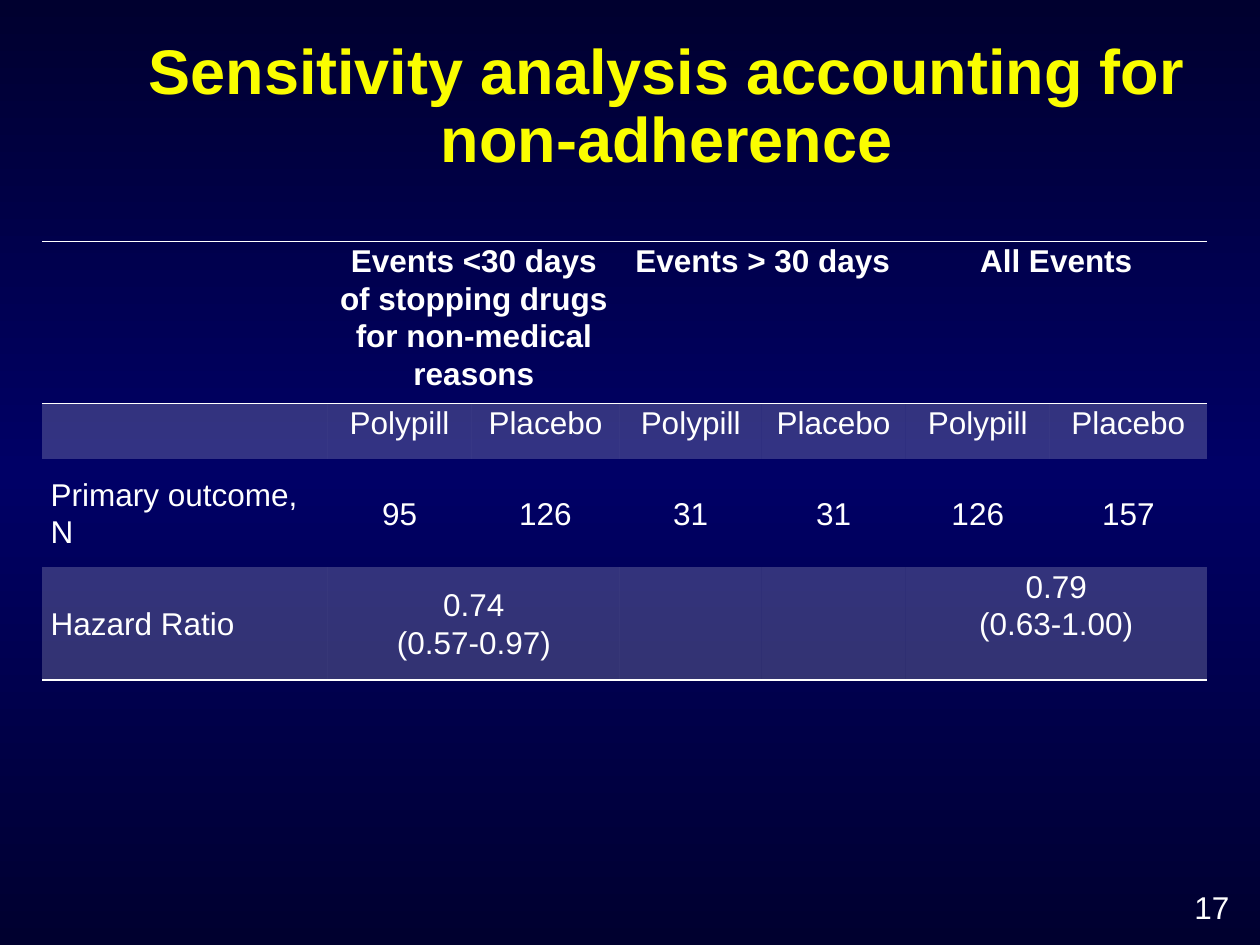
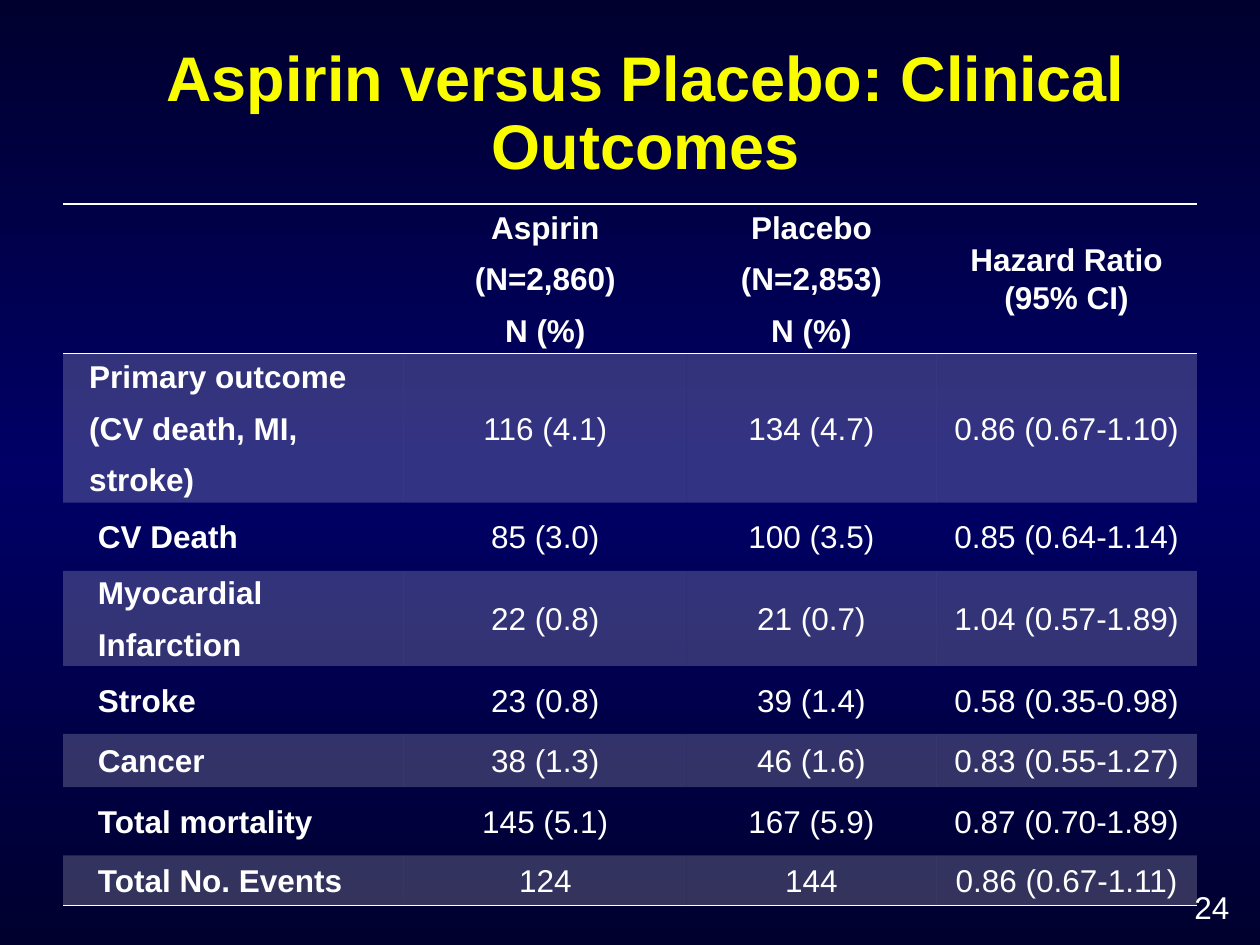
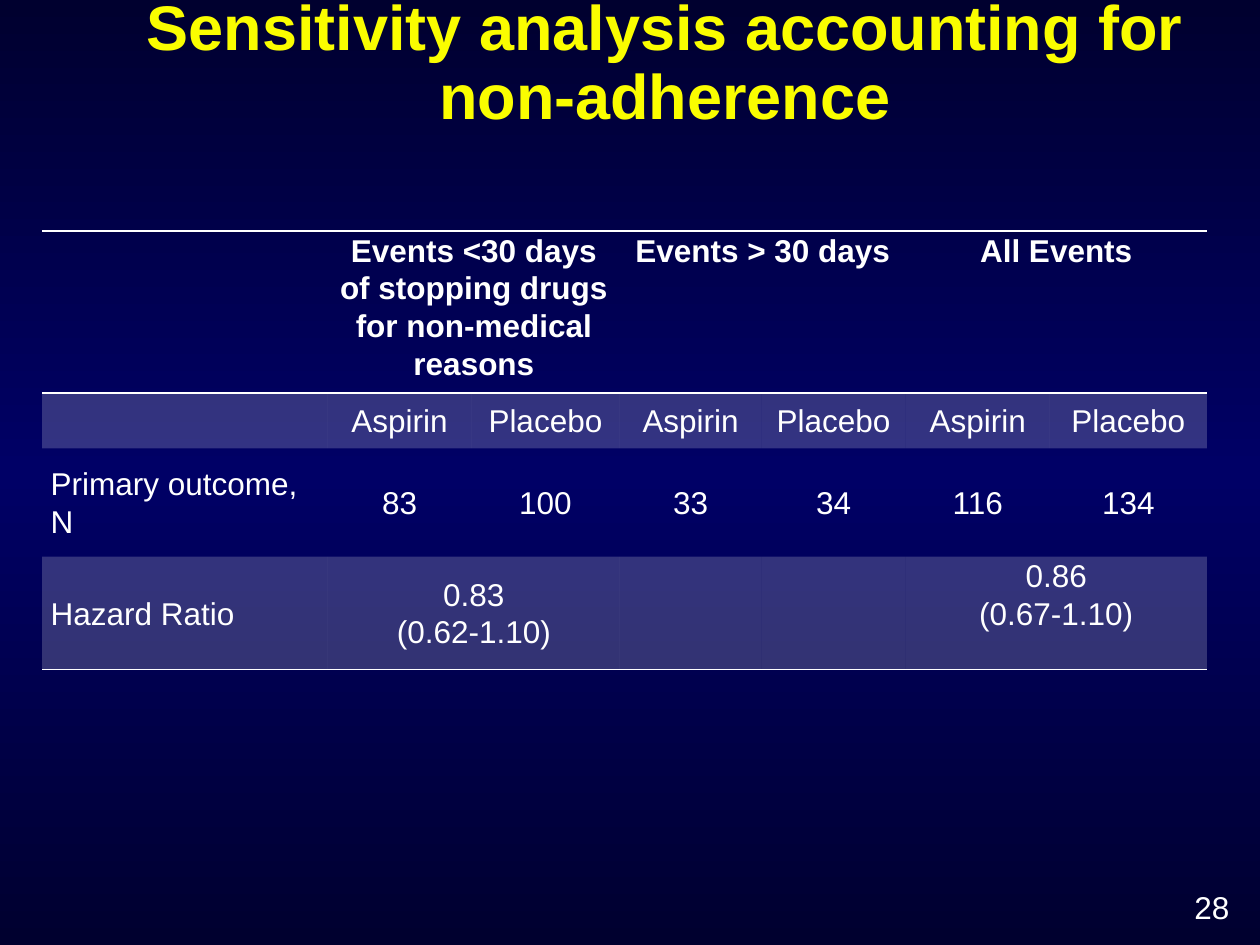
"""Builds three trial-result slides, each with a title, a table and a page number."""
from copy import deepcopy

from lxml import etree
from pptx import Presentation
from pptx.dml.color import RGBColor
from pptx.enum import text
from pptx.oxml import ns
from pptx.util import Pt

NAVY = RGBColor(0x00, 0x00, 0x2F)
BLUE = RGBColor(0x00, 0x00, 0x66)
YELLOW = RGBColor(0xFA, 0xFD, 0x00)
WHITE = RGBColor(0xFF, 0xFF, 0xFF)
FONT = "Arial"
NO_GRID_STYLE = "{2D5ABB26-0587-4C30-8999-92F81FD0307C}"
CENTER = text.PP_ALIGN.CENTER
LEFT = text.PP_ALIGN.LEFT
TOP = text.MSO_ANCHOR.TOP
MIDDLE = text.MSO_ANCHOR.MIDDLE
CELL_MARGIN = 5

SENSITIVITY_TITLE = "Sensitivity analysis accounting for non-adherence"
SENSITIVITY_COLUMNS = [163.4, 81.8, 85, 81, 82.4, 82.4, 89.7]
SENSITIVITY_ROWS = [86.2, 31.8, 61.8, 64.5]
SENSITIVITY_HEADER = [
    "",
    "Events <30 days of stopping drugs for non-medical reasons", None,
    "Events > 30 days", None,
    "All Events", None,
]

OUTCOMES_COLUMNS = [194.8, 161.6, 142.6, 149]
OUTCOMES_ROWS = [80.7, 80.7, 39, 50.8, 39, 30.4, 39, 28.6]
OUTCOMES = [
    ["", "Aspirin\n(N=2,860)\nN (%)", "Placebo\n(N=2,853)\nN (%)", "Hazard Ratio (95% CI)"],
    ["Primary outcome\n(CV death, MI,\nstroke)", "116 (4.1)", "134 (4.7)", "0.86 (0.67-1.10)"],
    ["CV Death", "85 (3.0)", "100 (3.5)", "0.85 (0.64-1.14)"],
    ["Myocardial\nInfarction", "22 (0.8)", "21 (0.7)", "1.04 (0.57-1.89)"],
    ["Stroke", "23 (0.8)", "39 (1.4)", "0.58 (0.35-0.98)"],
    ["Cancer", "38 (1.3)", "46 (1.6)", "0.83 (0.55-1.27)"],
    ["Total mortality", "145 (5.1)", "167 (5.9)", "0.87 (0.70-1.89)"],
    ["Total No. Events", "124", "144", "0.86 (0.67-1.11)"],
]


def set_background(master):
    """Gives the master a vertical navy-blue-navy gradient."""
    fill = master.background.fill
    fill.gradient()
    fill.gradient_angle = 90
    stop_list = master.element.find(".//" + ns.qn("a:gsLst"))
    stop_list.append(deepcopy(stop_list[-1]))
    for stop, color, position in zip(fill.gradient_stops, (NAVY, BLUE, NAVY), (0, 0.5, 1)):
        stop.color.rgb = color
        stop.position = position


def style_paragraph(paragraph, size, color, bold=False, alignment=LEFT, line_spacing=1.0):
    """Sets the font, alignment and line spacing of one paragraph."""
    paragraph.alignment = alignment
    paragraph.line_spacing = line_spacing
    font = paragraph.font
    font.name, font.size, font.bold = FONT, Pt(size), bold
    font.color.rgb = color


def add_text(slide, words, left, top, width, height, anchor=TOP, **style):
    """Adds a wrapping text box with one styled paragraph."""
    frame = slide.shapes.add_textbox(Pt(left), Pt(top), Pt(width), Pt(height)).text_frame
    frame.word_wrap = True
    frame.vertical_anchor = anchor
    frame.text = words
    style_paragraph(frame.paragraphs[0], **style)


def add_slide(presentation, title, page, left, top):
    """Adds a blank slide with its title and page number."""
    slide = presentation.slides.add_slide(presentation.slide_layouts[6])
    add_text(slide, title, left, top, 630, 86.4, text.MSO_ANCHOR.BOTTOM,
             size=36, color=YELLOW, bold=True, alignment=CENTER, line_spacing=0.9)
    add_text(slide, str(page), 675.4, 504, 44.6, 30, size=18, color=WHITE)
    return slide


def add_rule(cell, side):
    """Draws a white one-point border on a side of a cell, lnT or lnB."""
    line = etree.Element(ns.qn("a:" + side), w=str(Pt(1)))
    fill = etree.SubElement(line, ns.qn("a:solidFill"))
    etree.SubElement(fill, ns.qn("a:srgbClr"), val=str(WHITE))
    cell._tc.get_or_add_tcPr().insert(0, line)


def fill_cell(cell, shaded):
    """Fills a cell with translucent white, or leaves it clear."""
    if not shaded:
        cell.fill.background()
        return
    cell.fill.solid()
    cell.fill.fore_color.rgb = WHITE
    color = cell._tc.tcPr.find(".//" + ns.qn("a:srgbClr"))
    etree.SubElement(color, ns.qn("a:alpha"), val="20000")


def write_cell(cell, words, bold, alignment, anchor, gap):
    """Writes one paragraph per line of words, with a gap between them."""
    cell.margin_left = cell.margin_right = Pt(CELL_MARGIN)
    cell.margin_top = cell.margin_bottom = 0
    cell.vertical_anchor = anchor
    cell.text = words
    for index, paragraph in enumerate(cell.text_frame.paragraphs):
        style_paragraph(paragraph, 18, WHITE, bold, alignment, 1.07)
        if index:
            paragraph.space_before = Pt(gap)


def add_result_table(slide, left, top, columns, heights, rows, anchors, bold_labels=False, gap=0):
    """Adds a banded table in which None merges a cell with the one before it."""
    frame = slide.shapes.add_table(len(rows), len(columns), Pt(left), Pt(top),
                                   Pt(sum(columns)), Pt(sum(heights)))
    table = frame.table
    table.first_row = table.horz_banding = False
    table._tbl.tblPr.find(ns.qn("a:tableStyleId")).text = NO_GRID_STYLE
    for column, width in zip(table.columns, columns):
        column.width = Pt(width)
    for r, values in enumerate(rows):
        table.rows[r].height = Pt(heights[r])
        for c, words in enumerate(values):
            cell = table.cell(r, c)
            fill_cell(cell, r % 2 == 1)
            if r in (0, len(rows) - 1):
                add_rule(cell, "lnB")
            if r == 0:
                add_rule(cell, "lnT")
            if words is None:
                table.cell(r, c - 1).merge(cell)
                continue
            bold = r == 0 or (bold_labels and c == 0)
            write_cell(cell, words, bold, CENTER if c else LEFT, anchors[r], gap)
    return table


def add_sensitivity_table(slide, top, drug, arm_anchor, counts, early_ratio, total_ratio):
    """Adds the non-adherence table for one drug."""
    rows = [
        SENSITIVITY_HEADER,
        [""] + [drug, "Placebo"] * 3,
        ["Primary outcome, N"] + [str(count) for count in counts],
        ["Hazard Ratio", early_ratio, None, "", "", total_ratio, None],
    ]
    table = add_result_table(slide, 24, top, SENSITIVITY_COLUMNS, SENSITIVITY_ROWS, rows,
                             [TOP, arm_anchor, MIDDLE, MIDDLE])
    table.cell(3, 5).vertical_anchor = TOP


def add_outcomes_table(slide):
    """Adds the clinical outcomes table with indented row labels."""
    table = add_result_table(slide, 36, 116.6, OUTCOMES_COLUMNS, OUTCOMES_ROWS, OUTCOMES,
                             [MIDDLE] * len(OUTCOMES), bold_labels=True, gap=8)
    for r in range(1, len(OUTCOMES)):
        table.cell(r, 0).margin_left = Pt(CELL_MARGIN + (10 if r == 1 else 15))


def main():
    """Builds and saves the presentation."""
    presentation = Presentation()
    presentation.slide_width, presentation.slide_height = Pt(720), Pt(540)
    set_background(presentation.slide_master)

    slide = add_slide(presentation, SENSITIVITY_TITLE, 17, 66, 18)
    add_sensitivity_table(slide, 138, "Polypill", TOP, [95, 126, 31, 31, 126, 157],
                          "0.74\n(0.57-0.97)", "0.79\n(0.63-1.00)")

    slide = add_slide(presentation, "Aspirin versus Placebo: Clinical Outcomes", 24, 54, 21.6)
    add_outcomes_table(slide)

    slide = add_slide(presentation, SENSITIVITY_TITLE, 28, 65, -7)
    add_sensitivity_table(slide, 132, "Aspirin", MIDDLE, [83, 100, 33, 34, 116, 134],
                          "0.83\n(0.62-1.10)", "0.86\n(0.67-1.10)")

    presentation.save("out.pptx")


if __name__ == "__main__":
    main()
